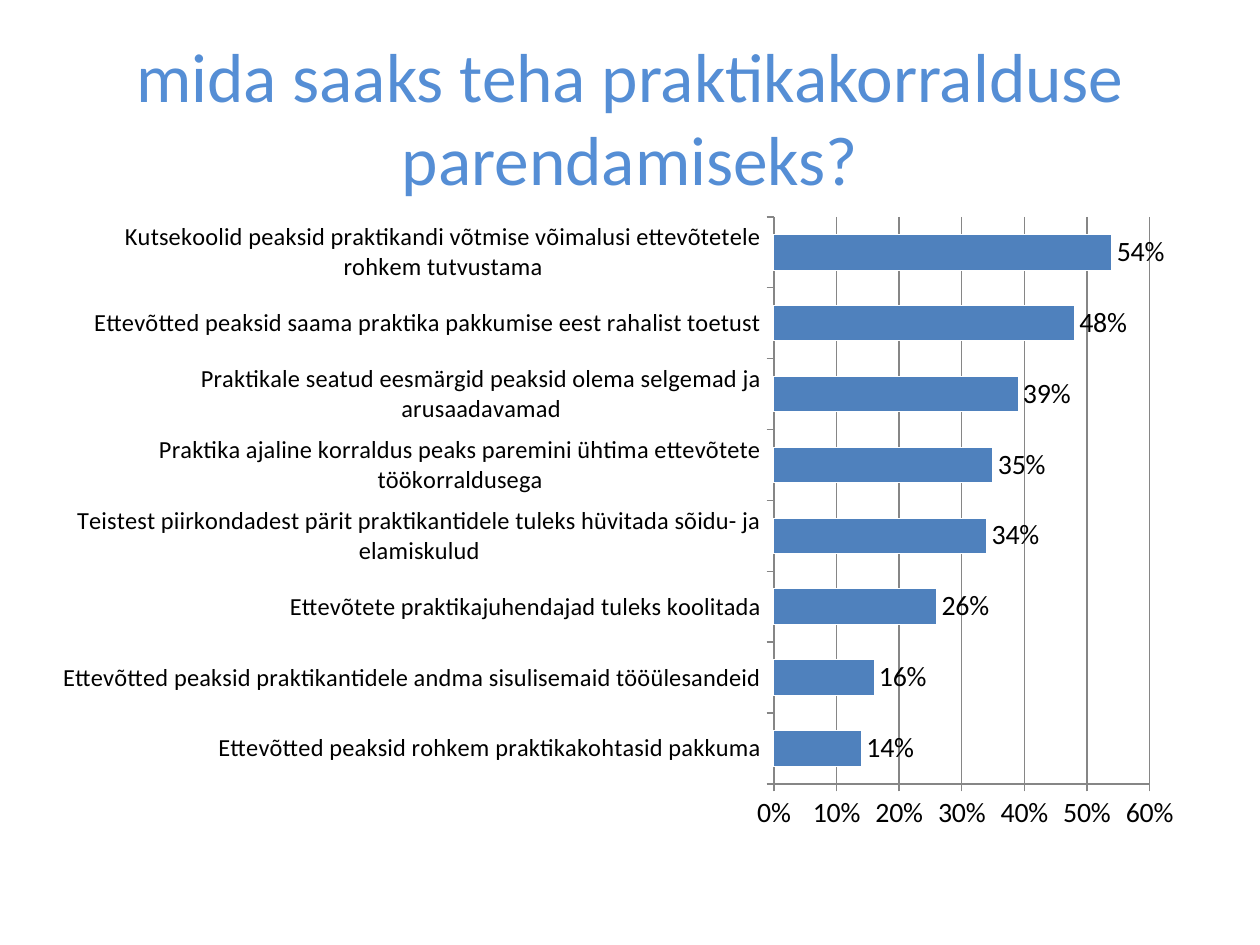
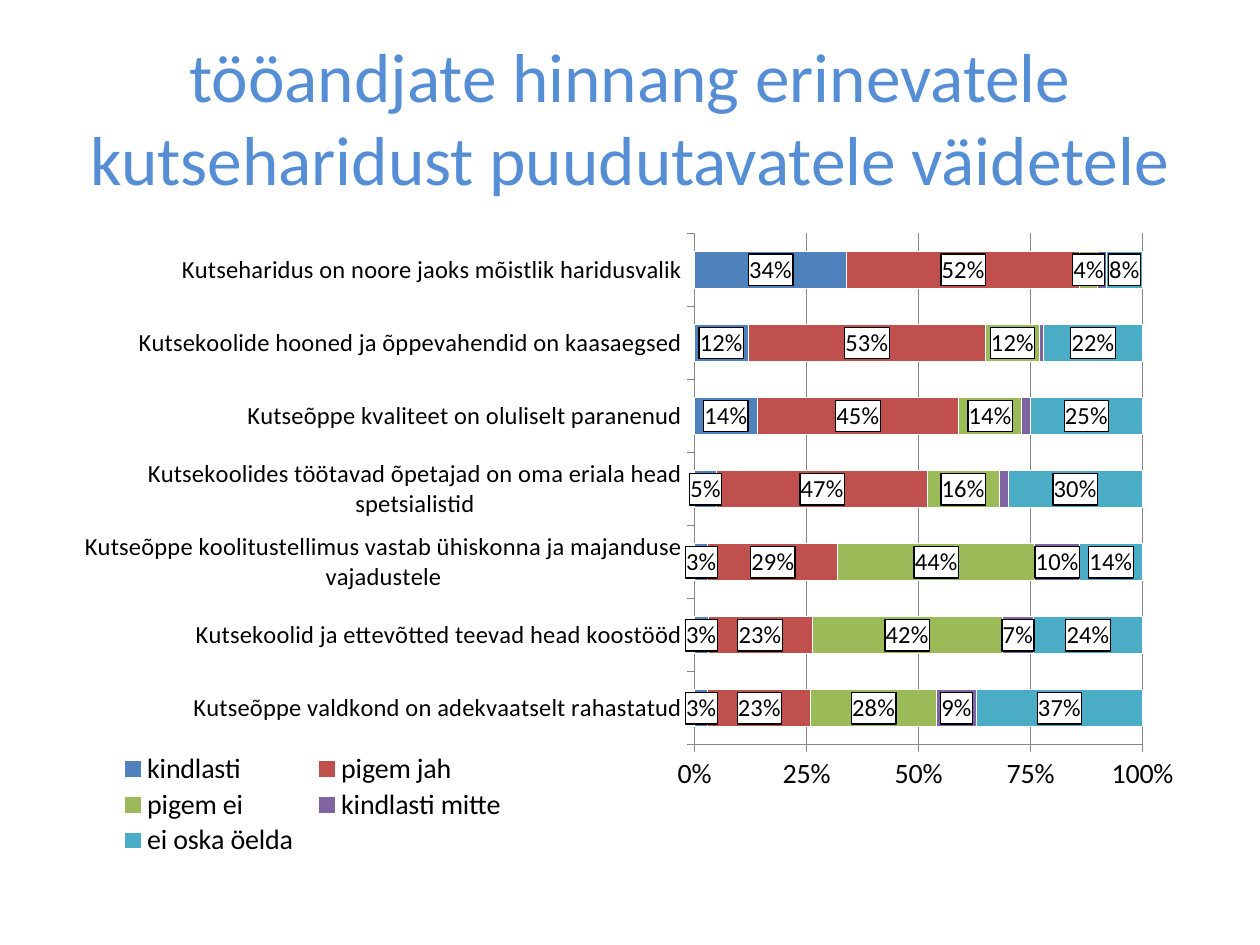
import lxml.etree
import pptx
import pptx.chart.data
import pptx.dml.color
import pptx.enum.chart
import pptx.enum.text
import pptx.oxml
import pptx.oxml.ns
import pptx.util

Inches = pptx.util.Inches
Pt = pptx.util.Pt
RGBColor = pptx.dml.color.RGBColor
ChartType = pptx.enum.chart.XL_CHART_TYPE
LabelPosition = pptx.enum.chart.XL_LABEL_POSITION
qn = pptx.oxml.ns.qn

FONT = "Calibri"
TITLE_BLUE = RGBColor(0x55, 0x8E, 0xD5)
BLACK = RGBColor(0, 0, 0)
WHITE = RGBColor(0xFF, 0xFF, 0xFF)
AXIS_GREY = RGBColor(0x86, 0x86, 0x86)
BLUE = RGBColor(0x4F, 0x81, 0xBD)
RED = RGBColor(0xC0, 0x50, 0x4D)
GREEN = RGBColor(0x9B, 0xBB, 0x59)
PURPLE = RGBColor(0x80, 0x64, 0xA2)
TEAL = RGBColor(0x4B, 0xAC, 0xC6)

TITLE_BOX = (0.5, 0.3, 9, 1.25)

# Listed from the bottom bar to the top one
IMPROVEMENTS = [
    ("Ettevõtted peaksid rohkem praktikakohtasid pakkuma", 0.14),
    ("Ettevõtted peaksid praktikantidele andma sisulisemaid tööülesandeid", 0.16),
    ("Ettevõtete praktikajuhendajad tuleks koolitada", 0.26),
    ("Teistest piirkondadest pärit praktikantidele tuleks hüvitada sõidu- ja elamiskulud", 0.34),
    ("Praktika ajaline korraldus peaks paremini ühtima ettevõtete töökorraldusega", 0.35),
    ("Praktikale seatud eesmärgid peaksid olema selgemad ja arusaadavamad", 0.39),
    ("Ettevõtted peaksid saama praktika pakkumise eest rahalist toetust", 0.48),
    ("Kutsekoolid peaksid praktikandi võtmise võimalusi ettevõtetele rohkem tutvustama", 0.54),
]
STATEMENTS = [
    "Kutseõppe valdkond on adekvaatselt rahastatud",
    "Kutsekoolid ja ettevõtted teevad head koostööd",
    "Kutseõppe koolitustellimus vastab ühiskonna ja majanduse vajadustele",
    "Kutsekoolides töötavad õpetajad on oma eriala head spetsialistid",
    "Kutseõppe kvaliteet on oluliselt paranenud",
    "Kutsekoolide hooned ja õppevahendid on kaasaegsed",
    "Kutseharidus on noore jaoks mõistlik haridusvalik",
]
ANSWERS = [
    ("kindlasti", BLUE, [0.03, 0.03, 0.03, 0.05, 0.14, 0.12, 0.34]),
    ("pigem jah", RED, [0.23, 0.23, 0.29, 0.47, 0.45, 0.53, 0.52]),
    ("pigem ei", GREEN, [0.28, 0.42, 0.44, 0.16, 0.14, 0.12, 0.04]),
    ("kindlasti mitte", PURPLE, [0.09, 0.07, 0.1, 0.02, 0.02, 0.01, 0.02]),
    ("ei oska öelda", TEAL, [0.37, 0.24, 0.14, 0.3, 0.25, 0.22, 0.08]),
]
SMALLEST_LABEL = 0.03


def add_title(slide, text, box):
    frame = slide.shapes.add_textbox(*map(Inches, box)).text_frame
    frame.word_wrap = True
    frame.vertical_anchor = pptx.enum.text.MSO_ANCHOR.MIDDLE
    paragraph = frame.paragraphs[0]
    paragraph.text = text
    paragraph.alignment = pptx.enum.text.PP_ALIGN.CENTER
    paragraph.font.name = FONT
    paragraph.font.size = Pt(39.6)
    paragraph.font.color.rgb = TITLE_BLUE


def make_layout(fractions, inner=False):
    """Return a manual c:layout from left, top, width, height as parts of the chart."""
    layout = pptx.oxml.parse_xml(
        f"<c:layout {pptx.oxml.ns.nsdecls('c')}><c:manualLayout/></c:layout>")
    settings = [("layoutTarget", "inner")] if inner else []
    settings += [("xMode", "edge"), ("yMode", "edge")]
    settings += zip("xywh", fractions)
    for tag, value in settings:
        lxml.etree.SubElement(layout[0], qn(f"c:{tag}")).set("val", str(value))
    return layout


def place_plot(chart, fractions):
    plot_area = chart._chartSpace.chart.plotArea
    for old_layout in plot_area.findall(qn("c:layout")):
        plot_area.remove(old_layout)
    plot_area.insert(0, make_layout(fractions, inner=True))


def style_axis(axis, size):
    axis.major_tick_mark = pptx.enum.chart.XL_TICK_MARK.OUTSIDE
    axis.minor_tick_mark = pptx.enum.chart.XL_TICK_MARK.NONE
    axis.tick_labels.font.size = Pt(size)
    lines = [axis.format.line]
    if axis.has_major_gridlines:
        lines.append(axis.major_gridlines.format.line)
    for line in lines:
        line.color.rgb = AXIS_GREY
        line.width = Pt(0.75)


def add_bar_chart(slide, box, chart_type, categories, series_list, plot, maximum, step):
    """Add a bar chart of percentages; series_list holds (name, colour, values)."""
    data = pptx.chart.data.CategoryChartData(number_format="0%")
    data.categories = categories
    for name, _, values in series_list:
        data.add_series(name, values)
    chart = slide.shapes.add_chart(chart_type, *map(Inches, box), data).chart
    chart.has_title = False
    chart.has_legend = False
    chart.font.name = FONT
    chart.font.size = Pt(16)
    chart.font.color.rgb = BLACK
    chart.plots[0].gap_width = 100
    chart.plots[0].vary_by_categories = False

    value_axis = chart.value_axis
    value_axis.minimum_scale = 0
    value_axis.maximum_scale = maximum
    value_axis.major_unit = step
    value_axis.has_major_gridlines = True
    value_axis.tick_labels.number_format = "0%"
    value_axis.tick_labels.number_format_is_linked = False
    style_axis(value_axis, 16)
    style_axis(chart.category_axis, 14)

    for series, (_, color, _) in zip(chart.plots[0].series, series_list):
        series.format.fill.solid()
        series.format.fill.fore_color.rgb = color
        series.format.line.color.rgb = WHITE
    place_plot(chart, plot)
    return chart


def label_series(series, position, size):
    labels = series.data_labels
    labels.show_value = True
    labels.number_format = "0%"
    labels.number_format_is_linked = False
    labels.position = position
    labels.font.name = FONT
    labels.font.size = Pt(size)
    labels.font.color.rgb = BLACK
    return labels._element


def frame_labels(labels):
    """Give the labels a white box with a black outline."""
    labels.find(qn("c:txPr")).addprevious(pptx.oxml.parse_xml(
        f"<c:spPr {pptx.oxml.ns.nsdecls('c', 'a')}>"
        f'<a:solidFill><a:srgbClr val="{WHITE}"/></a:solidFill>'
        f'<a:ln w="9525"><a:solidFill><a:srgbClr val="{BLACK}"/></a:solidFill></a:ln>'
        "</c:spPr>"))


def drop_small_labels(labels, values):
    small = [i for i, value in enumerate(values) if value < SMALLEST_LABEL]
    for place, index in enumerate(small):
        label = pptx.oxml.parse_xml(
            f"<c:dLbl {pptx.oxml.ns.nsdecls('c')}>"
            f'<c:idx val="{index}"/><c:delete val="1"/></c:dLbl>')
        labels.insert(place, label)


def add_legend(chart, fractions):
    chart.has_legend = True
    legend = chart.legend
    legend.position = pptx.enum.chart.XL_LEGEND_POSITION.BOTTOM
    legend.include_in_layout = False
    legend.font.name = FONT
    legend.font.size = Pt(16)
    legend.font.color.rgb = BLACK
    legend._element.find(qn("c:legendPos")).addnext(make_layout(fractions))


def add_improvements_chart(slide, box):
    categories, values = zip(*IMPROVEMENTS)
    chart = add_bar_chart(
        slide, box, ChartType.BAR_CLUSTERED, categories, [("Series 1", BLUE, values)],
        plot=(0.625, 0.02, 0.333, 0.886), maximum=0.6, step=0.1)
    label_series(chart.plots[0].series[0], LabelPosition.OUTSIDE_END, 16)


def add_statements_chart(slide, box):
    chart = add_bar_chart(
        slide, box, ChartType.BAR_STACKED_100, STATEMENTS, ANSWERS,
        plot=(0.557, 0.02, 0.395, 0.801), maximum=1, step=0.25)
    chart.plots[0].overlap = 100
    for series in chart.plots[0].series:
        labels = label_series(series, LabelPosition.CENTER, 14)
        frame_labels(labels)
        drop_small_labels(labels, series.values)
    add_legend(chart, (0.04, 0.83, 0.36, 0.17))


def add_chart_slide(presentation, title, add_chart, chart_box):
    slide = presentation.slides.add_slide(presentation.slide_layouts[6])
    add_title(slide, title, TITLE_BOX)
    add_chart(slide, chart_box)


def main():
    presentation = pptx.Presentation()
    presentation.slide_width = Inches(10)
    presentation.slide_height = Inches(7.5)
    add_chart_slide(presentation, "mida saaks teha praktikakorralduse parendamiseks?",
                    add_improvements_chart, (0.5, 1.62, 9, 5.08))
    add_chart_slide(presentation,
                    "tööandjate hinnang erinevatele kutseharidust puudutavatele väidetele",
                    add_statements_chart, (0.5, 1.75, 9, 5.07))
    presentation.save("out.pptx")


if __name__ == "__main__":
    main()
